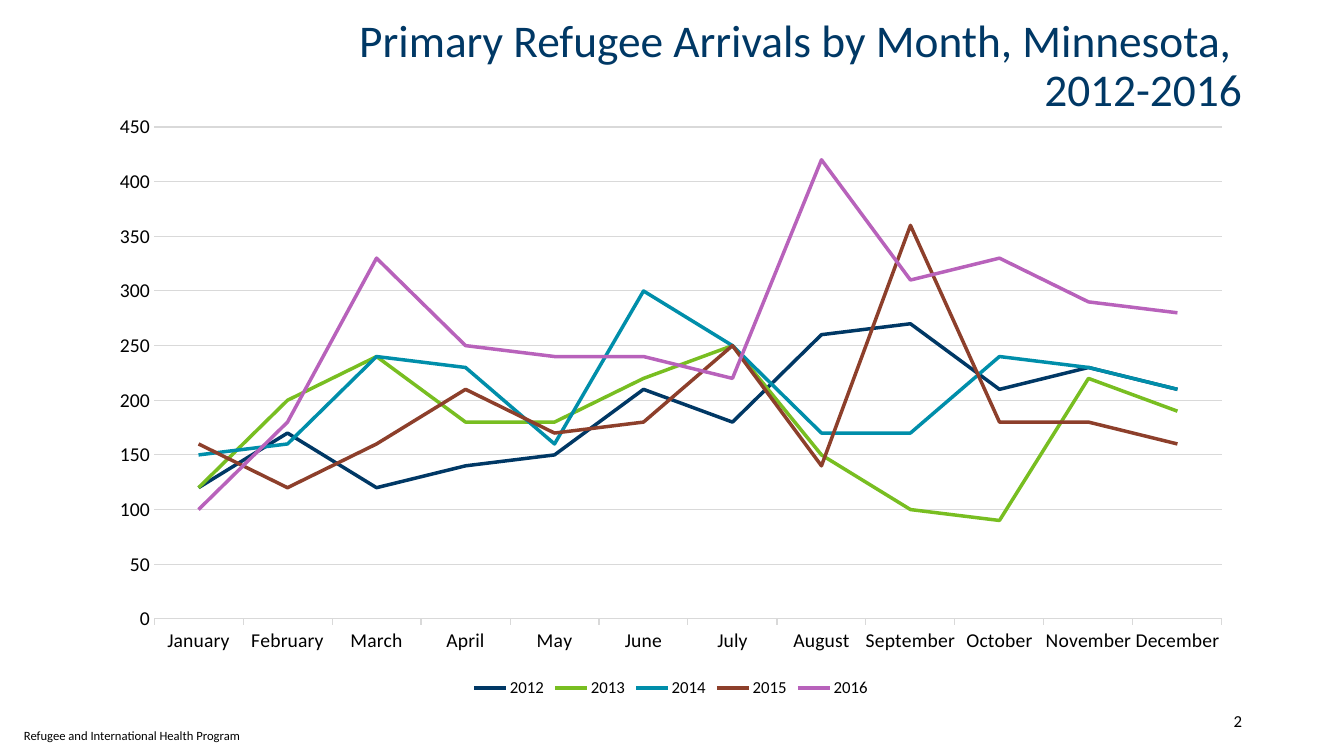
"""Build a slide with a line chart of monthly refugee arrivals in Minnesota."""
from lxml import etree
from pptx import Presentation
from pptx.chart.data import CategoryChartData
from pptx.dml.color import RGBColor
from pptx.enum.chart import XL_CHART_TYPE as ChartType, XL_LEGEND_POSITION as LegendSpot, XL_TICK_MARK as Tick
from pptx.enum.text import MSO_ANCHOR as Anchor, PP_ALIGN as Align
from pptx.oxml.ns import qn
from pptx.util import Pt

TITLE = "Primary Refugee Arrivals by Month, Minnesota, \n2012-2016"
PROGRAM = "Refugee and International Health Program"
PAGE = "2"
MONTHS = ["January", "February", "March", "April", "May", "June", "July",
          "August", "September", "October", "November", "December"]
ARRIVALS = {
    "2012": ("003865", [120, 170, 120, 140, 150, 210, 180, 260, 270, 210, 230, 210]),
    "2013": ("78BE21", [120, 200, 240, 180, 180, 220, 250, 150, 100, 90, 220, 190]),
    "2014": ("008EAA", [150, 160, 240, 230, 160, 300, 250, 170, 170, 240, 230, 210]),
    "2015": ("8D3F2B", [160, 120, 160, 210, 170, 180, 250, 140, 360, 180, 180, 160]),
    "2016": ("B862BB", [100, 180, 330, 250, 240, 240, 220, 420, 310, 330, 290, 280]),
}
NAVY, BLACK, GRID = "003865", "000000", "D9D9D9"
FONT = "Calibri"
CHART_BOX = (97, 104, 1148, 598)
PLOT_BOX = (154, 127, 1068, 492)


def px(length):
    return round(length * 914400 / 100.8)


def color(code):
    return RGBColor.from_string(code)


def style(font, size, code):
    font.name, font.size = FONT, Pt(size)
    font.color.rgb = color(code)


def add_text(slide, text, box, size, code=BLACK, align=Align.LEFT, anchor=Anchor.MIDDLE, spacing=1.0):
    frame = slide.shapes.add_textbox(*map(px, box)).text_frame
    frame.word_wrap, frame.vertical_anchor = True, anchor
    paragraph = frame.paragraphs[0]
    paragraph.alignment, paragraph.line_spacing = align, spacing
    for number, line in enumerate(text.split("\n")):
        if number:
            paragraph.add_line_break()
        run = paragraph.add_run()
        run.text = line
        style(run.font, size, code)


def place_plot(chart):
    left, top, width, height = CHART_BOX
    x, y, w, h = PLOT_BOX
    shares = {"x": (x - left) / width, "y": (y - top) / height, "w": w / width, "h": h / height}
    plot_area = chart.element.find(".//" + qn("c:plotArea"))
    for old in plot_area.findall(qn("c:layout")):
        plot_area.remove(old)
    layout = etree.Element(qn("c:layout"))
    plot_area.insert(0, layout)
    manual = etree.SubElement(layout, qn("c:manualLayout"))
    settings = {"layoutTarget": "inner", "xMode": "edge", "yMode": "edge",
                **{key: f"{share:.4f}" for key, share in shares.items()}}
    for tag, value in settings.items():
        etree.SubElement(manual, qn("c:" + tag)).set("val", value)


def add_arrivals_chart(slide):
    arrivals = CategoryChartData()
    arrivals.categories = MONTHS
    for year, (_, counts) in ARRIVALS.items():
        arrivals.add_series(year, counts)
    chart = slide.shapes.add_chart(ChartType.LINE, *map(px, CHART_BOX), arrivals).chart
    chart.has_title = False
    style(chart.font, 10, NAVY)
    chart.has_legend = True
    chart.legend.position = LegendSpot.BOTTOM
    chart.legend.include_in_layout = False
    style(chart.legend.font, 12, BLACK)

    plot = chart.plots[0]
    plot.vary_by_categories = False
    for series, (code, _) in zip(plot.series, ARRIVALS.values()):
        series.smooth = False
        series.format.line.width = Pt(2.5)
        series.format.line.color.rgb = color(code)

    months, counts = chart.category_axis, chart.value_axis
    for axis in (months, counts):
        style(axis.tick_labels.font, 14, BLACK)
    months.major_tick_mark = Tick.OUTSIDE
    counts.major_tick_mark = Tick.NONE
    counts.minimum_scale, counts.maximum_scale, counts.major_unit = 0, 450, 50
    counts.format.line.fill.background()
    for line in (months.format.line, counts.major_gridlines.format.line):
        line.width = Pt(0.75)
        line.color.rgb = color(GRID)
    place_plot(chart)


def main():
    deck = Presentation()
    deck.slide_width, deck.slide_height = px(1344), px(756)
    slide = deck.slides.add_slide(deck.slide_layouts[6])
    add_text(slide, TITLE, (93, 17, 1159, 101), 32.4, NAVY, Align.RIGHT, spacing=0.9)
    add_text(slide, PAGE, (1091, 701, 161, 40), 12, align=Align.RIGHT)
    add_text(slide, PROGRAM, (14, 723, 238, 25), 9, anchor=Anchor.TOP)
    add_arrivals_chart(slide)
    deck.save("out.pptx")


if __name__ == "__main__":
    main()
